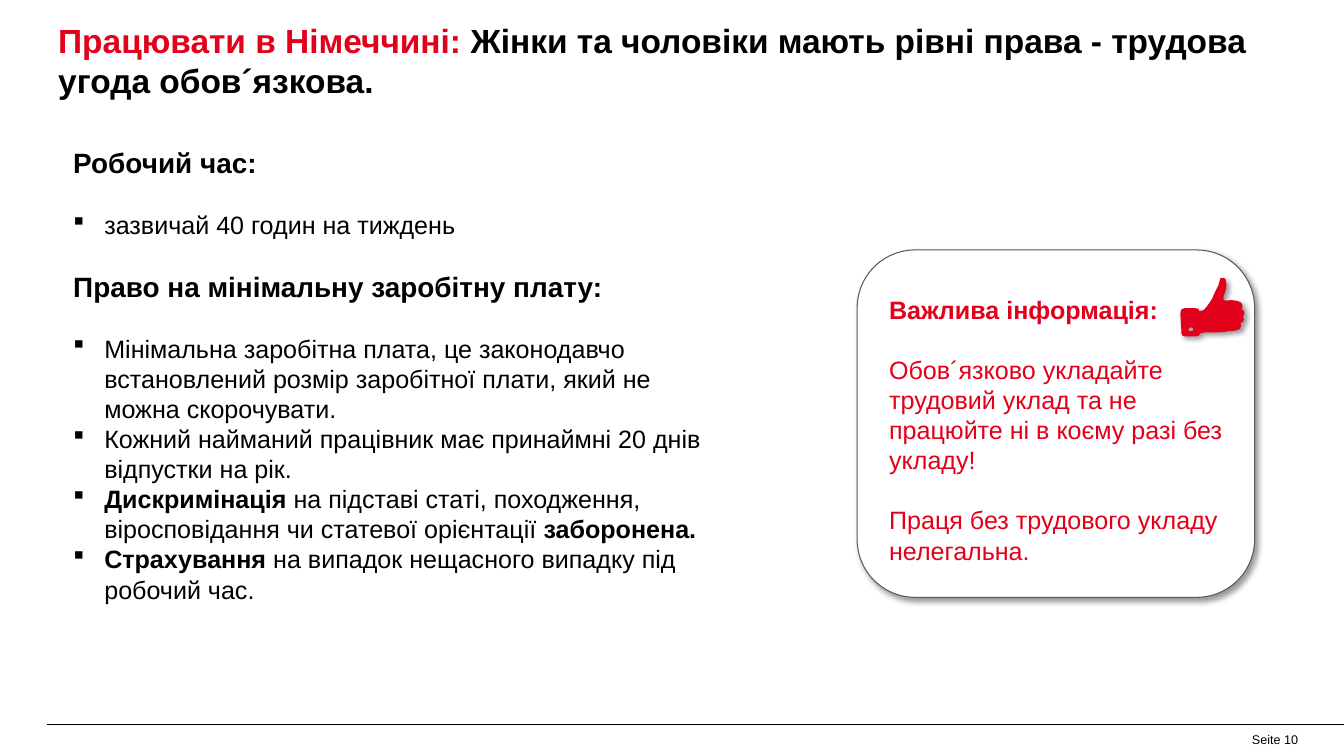
import pptx
import pptx.util
import pptx.dml.color
import pptx.enum.shapes
import pptx.enum.text
import pptx.oxml
import pptx.oxml.ns

Inches, Pt = pptx.util.Inches, pptx.util.Pt
RGBColor = pptx.dml.color.RGBColor
ANCHOR, ALIGN = pptx.enum.text.MSO_ANCHOR, pptx.enum.text.PP_ALIGN
qn = pptx.oxml.ns.qn
DRAWING = pptx.oxml.ns.nsdecls("a")

RED = RGBColor(0xE2, 0x00, 0x1A)
BLACK = RGBColor(0x00, 0x00, 0x00)
WHITE = RGBColor(0xFF, 0xFF, 0xFF)
GREY = RGBColor(0x59, 0x59, 0x59)
FONT = "Arial"
GAP = 21.6  # points, one line of body text

# Content: a run is (text, bold, colour)
TITLE = [
    ("Працювати в Німеччині: ", True, RED),
    ("Жінки та чоловіки мають рівні права - трудова угода обов´язкова.", True, BLACK),
]
PAGE = "Seite 10"
# Each section is (heading, bullets); a bullet is a list of (text, bold)
SECTIONS = [
    ("Робочий час:", [[("зазвичай 40 годин на тиждень", False)]]),
    ("Право на мінімальну заробітну плату:", [
        [("Мінімальна заробітна плата, це законодавчо встановлений розмір "
          "заробітної плати, який не можна скорочувати.", False)],
        [("Кожний найманий працівник має принаймні 20 днів відпустки на рік.", False)],
        [("Дискримінація ", True),
         ("на підставі статі, походження, віросповідання чи статевої орієнтації ", False),
         ("заборонена.", True)],
        [("Cтрахування ", True), ("на випадок нещасного випадку під робочий час.", False)],
    ]),
]
ADVICE = [
    ("Важлива інформація:", True),
    ("Обов´язково укладайте трудовий уклад та не працюйте ні в коєму разі без укладу!", False),
    ("Праця без трудового укладу нелегальна.", False),
]

# Thumb contours in hundredths of an inch: start, then curves (control, control, end)
THUMB_CORNER = (1176, 276)
THUMB_HAND = ((1238, 315), [
    (1242, 313, 1239, 308, 1237, 308), (1242, 299, 1227, 299, 1226, 299),
    (1219, 300, 1219, 299, 1219, 298), (1218, 297, 1221, 290, 1221, 289),
    (1223, 285, 1221, 279, 1221, 278), (1220, 276, 1216, 277, 1216, 277),
    (1216, 277, 1214, 283, 1214, 284), (1213, 286, 1212, 288, 1212, 288),
    (1212, 288, 1208, 296, 1208, 297), (1204, 304, 1200, 308, 1199, 309),
    (1199, 309, 1197, 309, 1195, 310), (1195, 308, 1194, 307, 1191, 307),
    (1190, 307, 1181, 307, 1180, 307), (1177, 307, 1176, 309, 1176, 312),
    (1176, 315, 1177, 327, 1177, 330), (1177, 334, 1178, 335, 1180, 335),
    (1181, 335, 1191, 335, 1192, 335), (1194, 335, 1195, 334, 1196, 332),
    (1199, 331, 1202, 331, 1202, 331), (1216, 331, 1221, 331, 1222, 330),
    (1228, 330, 1231, 329, 1232, 329), (1238, 328, 1236, 323, 1236, 322),
    (1241, 320, 1239, 316, 1238, 315),
])
THUMB_BUTTON = ((1186, 330), [
    (1185, 330, 1184, 329, 1184, 328), (1184, 327, 1185, 326, 1186, 326),
    (1188, 326, 1189, 327, 1189, 328), (1189, 329, 1188, 330, 1186, 330),
])


def write_runs(paragraph, runs, size):
    for text, bold, color in runs:
        run = paragraph.add_run()
        run.text = text
        run.font.name, run.font.size = FONT, Pt(size)
        run.font.bold, run.font.color.rgb = bold, color


def add_paragraph(frame, first):
    return frame.paragraphs[0] if first else frame.add_paragraph()


def add_text_frame(left, top, width, height):
    box = slide.shapes.add_textbox(Inches(left), Inches(top), Inches(width), Inches(height))
    box.text_frame.word_wrap = True
    return box.text_frame


def add_bullet(paragraph):
    properties = paragraph._p.get_or_add_pPr()
    properties.set("marL", str(Inches(0.31)))
    properties.set("indent", str(-Inches(0.31)))
    # In Wingdings this character is the small square
    for element in ('buFont {} typeface="Wingdings" charset="2"', 'buChar {} char="§"'):
        properties.append(pptx.oxml.parse_xml(f"<a:{element.format(DRAWING)}/>"))


def add_shadow(shape):
    shape.shadow.inherit = False
    effects = shape._element.spPr.find(qn("a:effectLst"))
    effects.append(pptx.oxml.parse_xml(
        f'<a:outerShdw {DRAWING} blurRad="{Pt(4)}" dist="{Pt(3)}" '
        'dir="2700000" algn="tl" rotWithShape="0">'
        '<a:srgbClr val="000000"><a:alpha val="40000"/></a:srgbClr></a:outerShdw>'))


def bend_lines(shape, curves, corner):
    """Turn each straight segment of a freeform into its cubic curve."""
    segments = list(shape._element.iter(qn("a:lnTo")))
    for segment, curve in zip(segments, curves):
        points = "".join(f'<a:pt x="{x - corner[0]}" y="{y - corner[1]}"/>'
                         for x, y in zip(curve[::2], curve[1::2]))
        bend = pptx.oxml.parse_xml(f"<a:cubicBezTo {DRAWING}>{points}</a:cubicBezTo>")
        segment.getparent().replace(segment, bend)


presentation = pptx.Presentation()
presentation.slide_width, presentation.slide_height = Inches(13.39), Inches(7.53)
slide = presentation.slides.add_slide(presentation.slide_layouts[5])

# Footer rule and page number
rule = slide.shapes.add_connector(pptx.enum.shapes.MSO_CONNECTOR.STRAIGHT,
                                  Inches(0.47), Inches(7.22), Inches(13.39), Inches(7.22))
rule.line.color.rgb, rule.line.width = BLACK, Pt(0.5)
rule._element.spPr.append(pptx.oxml.parse_xml(f"<a:effectLst {DRAWING}/>"))
page = add_text_frame(12.09, 7.22, 0.94, 0.3)
page.vertical_anchor = ANCHOR.MIDDLE
page.paragraphs[0].alignment = ALIGN.RIGHT
write_runs(page.paragraphs[0], [(PAGE, False, BLACK)], 9)

# Title
title = slide.shapes.title
title.left, title.top, title.width, title.height = map(Inches, (0.48, 0.15, 12.27, 0.94))
title.text_frame.auto_size = pptx.enum.text.MSO_AUTO_SIZE.NONE
title.text_frame.vertical_anchor = ANCHOR.TOP
title.text_frame.paragraphs[0].alignment = ALIGN.LEFT
write_runs(title.text_frame.paragraphs[0], TITLE, 24)

# Working hours and minimum wage
rights = add_text_frame(0.65, 1.35, 6.66, 5)
rights.margin_left = rights.margin_right = Inches(0.08)
rights.margin_top = rights.margin_bottom = Inches(0.1)
for section, (heading, bullets) in enumerate(SECTIONS):
    paragraph = add_paragraph(rights, section == 0)
    if section:
        paragraph.space_before = Pt(GAP)
    paragraph.space_after = Pt(GAP)
    write_runs(paragraph, [(heading, True, BLACK)], 20)
    for bullet in bullets:
        paragraph = rights.add_paragraph()
        add_bullet(paragraph)
        write_runs(paragraph, [(text, bold, BLACK) for text, bold in bullet], 18)

# Advice card
card = slide.shapes.add_shape(pptx.enum.shapes.MSO_SHAPE.ROUNDED_RECTANGLE,
                              Inches(8.54), Inches(2.49), Inches(3.96), Inches(3.46))
card.fill.solid()
card.fill.fore_color.rgb = WHITE
card.line.color.rgb, card.line.width = GREY, Pt(0.75)
add_shadow(card)
advice = add_text_frame(8.76, 2.88, 3.52, 2.83)
for index, (text, bold) in enumerate(ADVICE):
    paragraph = add_paragraph(advice, index == 0)
    if index:
        paragraph.space_before = Pt(GAP)
    write_runs(paragraph, [(text, bold, RED)], 18)

# Thumbs-up sign
(hand_start, hand_curves), (button_start, button_curves) = THUMB_HAND, THUMB_BUTTON
outline = slide.shapes.build_freeform(*hand_start, scale=Inches(0.01))
outline.add_line_segments([curve[4:] for curve in hand_curves], close=True)
outline.move_to(*button_start)
outline.add_line_segments([curve[4:] for curve in button_curves], close=True)
thumb = outline.convert_to_shape()
# The straight outline starts at the ends of the curves, one unit below the top
bend_lines(thumb, hand_curves + button_curves, (THUMB_CORNER[0], THUMB_CORNER[1] + 1))
thumb.fill.solid()
thumb.fill.fore_color.rgb = RED
thumb.line.fill.background()
add_shadow(thumb)

presentation.save("out.pptx")
